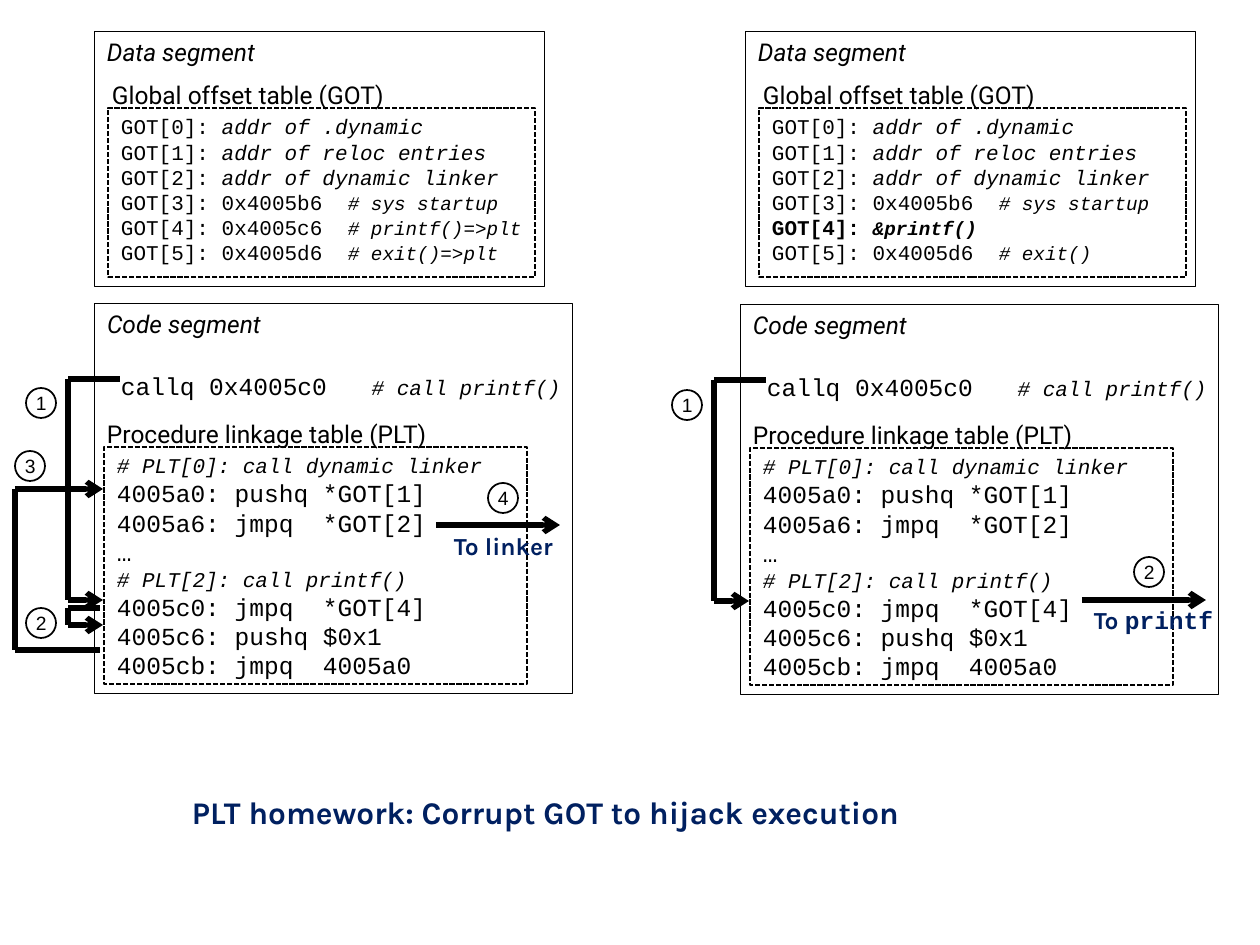
import pptx
import pptx.util
import pptx.dml.color
import pptx.enum.dml
import pptx.enum.shapes
import pptx.enum.text
import pptx.oxml
import pptx.oxml.ns

PX = 914400 // 126
MONO, SANS, HEAD = "Courier New", "Roboto", "Karla"
BLACK, WHITE, NAVY = "000000", "FFFFFF", "002060"
RECT = pptx.enum.shapes.MSO_SHAPE.RECTANGLE
OVAL = pptx.enum.shapes.MSO_SHAPE.OVAL
ALIGN = pptx.enum.text.PP_ALIGN
ANCHOR = pptx.enum.text.MSO_ANCHOR

ITALIC = {"italic": True}
BOLD = {"bold": True}
NOTE = {"size": 11, "italic": True}
REMARK = {"size": 12, "italic": True}

GOT_START = [
    [("GOT[0]: ", {}), ("addr of .dynamic", ITALIC)],
    [("GOT[1]: ", {}), ("addr of reloc entries", ITALIC)],
    [("GOT[2]: ", {}), ("addr of dynamic linker", ITALIC)],
    [("GOT[3]: 0x4005b6  ", {}), ("# sys startup", NOTE)],
]
GOT_BEFORE = GOT_START + [
    [("GOT[4]: 0x4005c6  ", {}), ("# printf()=>plt", NOTE)],
    [("GOT[5]: 0x4005d6  ", {}), ("# exit()=>plt", NOTE)],
]
GOT_AFTER = GOT_START + [
    [("GOT[4]: ", BOLD), ("&printf()", {**NOTE, **BOLD})],
    [("GOT[5]: 0x4005d6  ", {}), ("# exit()", NOTE)],
]
CALL = [[("callq 0x4005c0   ", {}), ("# call printf()", REMARK)]]
PLT = [
    [("# PLT[0]: call dynamic linker", REMARK)],
    [("4005a0: pushq *GOT[1]", {})],
    [("4005a6: jmpq  *GOT[2]", {})],
    [("…", {})],
    [("# PLT[2]: call printf()", REMARK)],
    [("4005c0: jmpq  *GOT[4]", {})],
    [("4005c6: pushq $0x1", {})],
    [("4005cb: jmpq  4005a0", {})],
]

DATA_PANELS = [(94, 31, GOT_BEFORE), (745, 31, GOT_AFTER)]
CODE_PANELS = [(94, 303), (740, 304)]

STEPS = [
    ("1", (26, 388), [(120, 379), (68, 379), (68, 600), (103, 600)]),
    ("2", (26, 608), [(100, 608), (68, 608), (68, 625), (103, 625)]),
    ("3", (15, 451), [(100, 650), (15, 650), (15, 489), (103, 489)]),
    ("4", (488, 483), [(436, 525), (560, 525)]),
    ("1", (672, 390), [(766, 380), (714, 380), (714, 601), (749, 601)]),
    ("2", (1134, 557), [(1082, 600), (1206, 600)]),
]

CAPTIONS = [
    ((179, 787, 1016, 63), 18, [("PLT homework: Corrupt GOT to hijack execution", {})]),
    ((441, 525, 126, 43), 14, [("To linker", {})]),
    ((1081, 599, 149, 43), 14, [("To ", {}), ("printf", {"font": MONO})]),
]

prs = pptx.Presentation()
prs.slide_width, prs.slide_height = 1260 * PX, 945 * PX
slide = prs.slides.add_slide(prs.slide_layouts[6])


def rgb(value):
    return pptx.dml.color.RGBColor.from_string(value)


def write(s, lines, font=SANS, size=14, color=BLACK, italic=False, bold=False,
          align=ALIGN.LEFT, anchor=ANCHOR.TOP, left=13, top=6):
    tf = s.text_frame
    tf.word_wrap = False
    tf.vertical_anchor = anchor
    tf.margin_left, tf.margin_top = left * PX, top * PX
    for i, line in enumerate(lines):
        p = tf.paragraphs[0] if i == 0 else tf.add_paragraph()
        p.alignment = align
        for text, style in line:
            look = {"font": font, "size": size, "italic": italic, "bold": bold, **style}
            r = p.add_run()
            r.text = text
            r.font.name = look["font"]
            r.font.size = pptx.util.Pt(look["size"])
            r.font.italic, r.font.bold = look["italic"], look["bold"]
            r.font.color.rgb = rgb(color)


def shape(kind, x, y, w, h, fill=None, width=1, dashed=False):
    s = slide.shapes.add_shape(kind, x * PX, y * PX, w * PX, h * PX)
    s.shadow.inherit = False
    if fill:
        s.fill.solid()
        s.fill.fore_color.rgb = rgb(fill)
    else:
        s.fill.background()
    s.line.color.rgb = rgb(BLACK)
    s.line.width = pptx.util.Pt(width)
    if dashed:
        s.line.dash_style = pptx.enum.dml.MSO_LINE.SQUARE_DOT
    return s


def label(x, y, w, h, runs, **style):
    s = slide.shapes.add_textbox(x * PX, y * PX, w * PX, h * PX)
    write(s, [runs], **style)
    s.text_frame.auto_size = pptx.enum.text.MSO_AUTO_SIZE.SHAPE_TO_FIT_TEXT


def line(start, end, arrow):
    s = slide.shapes.add_connector(pptx.enum.shapes.MSO_CONNECTOR.STRAIGHT,
                                   *(v * PX for v in start + end))
    s.line.color.rgb = rgb(BLACK)
    s.line.width = pptx.util.Pt(3)
    if arrow:
        tail = pptx.oxml.ns.qn("a:tailEnd")
        s.line._get_or_add_ln().append(pptx.oxml.xmlchemy.OxmlElement("a:tailEnd"))
        s._element.spPr.find(".//" + tail).set("type", "arrow")
    s._element.spPr.append(pptx.oxml.xmlchemy.OxmlElement("a:effectLst"))


for x, y, entries in DATA_PANELS:
    shape(RECT, x, y, 450, 255, fill=WHITE, width=0.25)
    write(shape(RECT, x + 14, y + 77, 427, 169, dashed=True), entries, font=MONO, size=12)
    label(x + 5, y + 43, 300, 43, [("Global offset table (GOT)", {})])
    label(x, y, 179, 43, [("Data segment", ITALIC)])

for x, y in CODE_PANELS:
    s = shape(RECT, x, y, 478, 390, fill=WHITE, width=0.25)
    write(s, CALL, font=MONO, left=27, top=68)
    label(x, y, 185, 43, [("Code segment", ITALIC)])
    write(shape(RECT, x + 10, y + 144, 423, 237, dashed=True), PLT, font=MONO)
    label(x, y + 110, 352, 43, [("Procedure linkage table (PLT)", {})])

for number, (x, y), points in STEPS:
    legs = list(zip(points, points[1:]))
    for i, (start, end) in enumerate(legs):
        line(start, end, arrow=i == len(legs) - 1)
    write(shape(OVAL, x, y, 30, 30), [[(number, {})]], font="Arial", size=11,
          align=ALIGN.CENTER, anchor=ANCHOR.MIDDLE)

for box, size, runs in CAPTIONS:
    label(*box, runs, font=HEAD, size=size, color=NAVY, bold=True)

prs.save("out.pptx")
